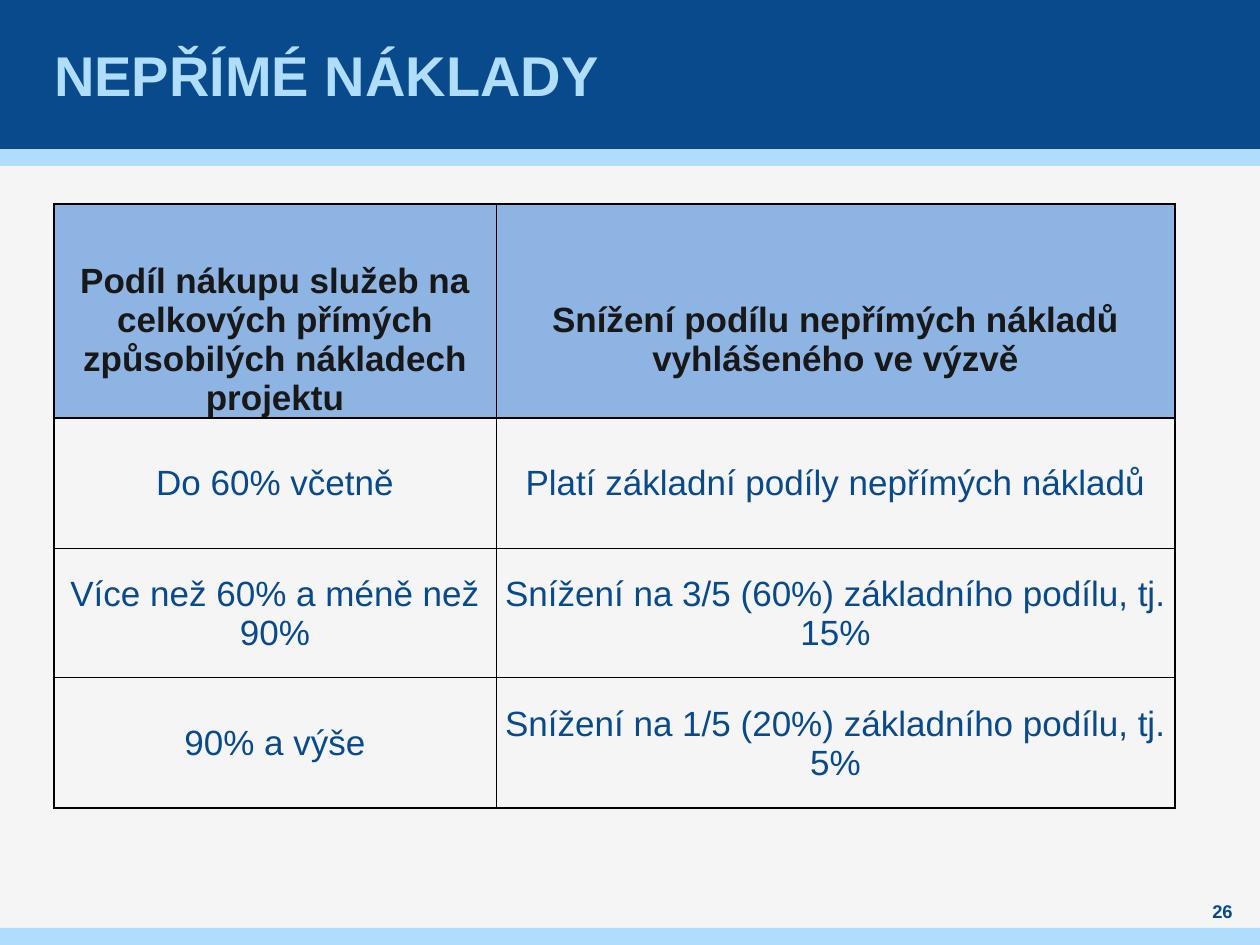
import pptx
import pptx.dml.color
import pptx.enum.shapes
import pptx.enum.text
import pptx.oxml
import pptx.oxml.ns
import pptx.util

COLORS = {
    "paper": "F5F5F5",
    "navy": "084A8B",
    "sky": "AFDDFA",
    "header": "8DB4E2",
    "ink": "181818",
    "border": "000000",
}
ANCHOR = pptx.enum.text.MSO_ANCHOR
ALIGN = pptx.enum.text.PP_ALIGN


def px(length):
    return pptx.util.Emu(round(length * 914400 / 126))


def rgb(name):
    return pptx.dml.color.RGBColor.from_string(COLORS[name])


class SlideBuilder:
    font = "Arial"

    def __init__(self, page):
        self.page = page
        page.background.fill.solid()
        page.background.fill.fore_color.rgb = rgb("paper")

    def style(self, para, size, color, bold, align):
        para.alignment = align
        para.font.name = self.font
        para.font.size = pptx.util.Pt(size)
        para.font.bold = bold
        para.font.color.rgb = rgb(color)

    def frame(self, frame, text, size, color, align, side=0):
        frame.word_wrap = True
        frame.auto_size = pptx.enum.text.MSO_AUTO_SIZE.NONE
        frame.vertical_anchor = ANCHOR.MIDDLE
        frame.margin_left = frame.margin_right = px(side)
        frame.margin_top = frame.margin_bottom = 0
        frame.text = text
        self.style(frame.paragraphs[0], size, color, True, align)

    def band(self, top, height, color):
        box = self.page.shapes.add_shape(
            pptx.enum.shapes.MSO_SHAPE.RECTANGLE, 0, px(top), px(1260), px(height))
        box.shadow.inherit = False
        box.fill.solid()
        box.fill.fore_color.rgb = rgb(color)
        box.line.fill.background()

    def title(self, text, left, top, width, height):
        box = self.page.shapes.title
        box.left, box.top, box.width, box.height = map(px, (left, top, width, height))
        self.frame(box.text_frame, text, 32, "sky", ALIGN.LEFT, side=5)
        self.page.shapes.element.append(box.element)

    def text(self, text, left, top, width, height):
        box = self.page.shapes.add_textbox(*map(px, (left, top, width, height)))
        self.frame(box.text_frame, text, 10.5, "navy", ALIGN.CENTER)

    def borders(self, cell, widths):
        properties = cell._tc.get_or_add_tcPr()
        for side, width in widths.items():
            properties.append(pptx.oxml.parse_xml(
                f'<a:ln{side} {pptx.oxml.ns.nsdecls("a")} w="{pptx.util.Pt(width)}">'
                f'<a:solidFill><a:srgbClr val="{COLORS["border"]}"/></a:solidFill>'
                f'</a:ln{side}>'))

    def cell(self, cell, text, header):
        cell.margin_left = cell.margin_right = cell.margin_top = px(1)
        cell.margin_bottom = 0
        cell.vertical_anchor = ANCHOR.BOTTOM if header else ANCHOR.MIDDLE
        if header:
            cell.fill.solid()
            cell.fill.fore_color.rgb = rgb("header")
        else:
            cell.fill.background()
        cell.text = text
        color = "ink" if header else "navy"
        self.style(cell.text_frame.paragraphs[0], 20, color, header, ALIGN.CENTER)

    def table(self, rows, left, top, widths, heights):
        table = self.page.shapes.add_table(
            len(rows), len(widths), px(left), px(top),
            px(sum(widths)), px(sum(heights))).table
        table.first_row = table.horz_banding = False
        for column, width in zip(table.columns, widths):
            column.width = px(width)
        last_row, last_column = len(rows) - 1, len(widths) - 1
        for r, (texts, height) in enumerate(zip(rows, heights)):
            table.rows[r].height = px(height)
            for c, text in enumerate(texts):
                cell = table.cell(r, c)
                self.borders(cell, {
                    "L": 1 if c == 0 else 0.5,
                    "R": 1 if c == last_column else 0.5,
                    "T": 1 if r <= 1 else 0.5,
                    "B": 1 if r in (0, last_row) else 0.5,
                })
                self.cell(cell, text, header=r == 0)
        return table


def main():
    deck = pptx.Presentation()
    deck.slide_width, deck.slide_height = px(1260), px(945)
    slide = SlideBuilder(deck.slides.add_slide(deck.slide_layouts[5]))
    slide.band(149, 17, "sky")
    slide.band(0, 149, "navy")
    slide.band(928, 17, "sky")
    slide.title("NEPŘÍMÉ NÁKLADY", 49, 0, 1160, 149)
    slide.text("26", 1190, 898, 65, 26)
    costs = slide.table([
        ("Podíl nákupu služeb na celkových přímých způsobilých nákladech projektu",
         "Snížení podílu nepřímých nákladů vyhlášeného ve výzvě"),
        ("Do 60% včetně", "Platí základní podíly nepřímých nákladů"),
        ("Více než 60% a méně než 90%",
         "Snížení na 3/5 (60%) základního podílu, tj. 15%"),
        ("90% a výše", "Snížení na 1/5 (20%) základního podílu, tj. 5%"),
    ], 54, 204, (442, 679), (214, 130, 130, 130))
    costs.cell(0, 1).margin_bottom = px(39)
    deck.save("out.pptx")


if __name__ == "__main__":
    main()
